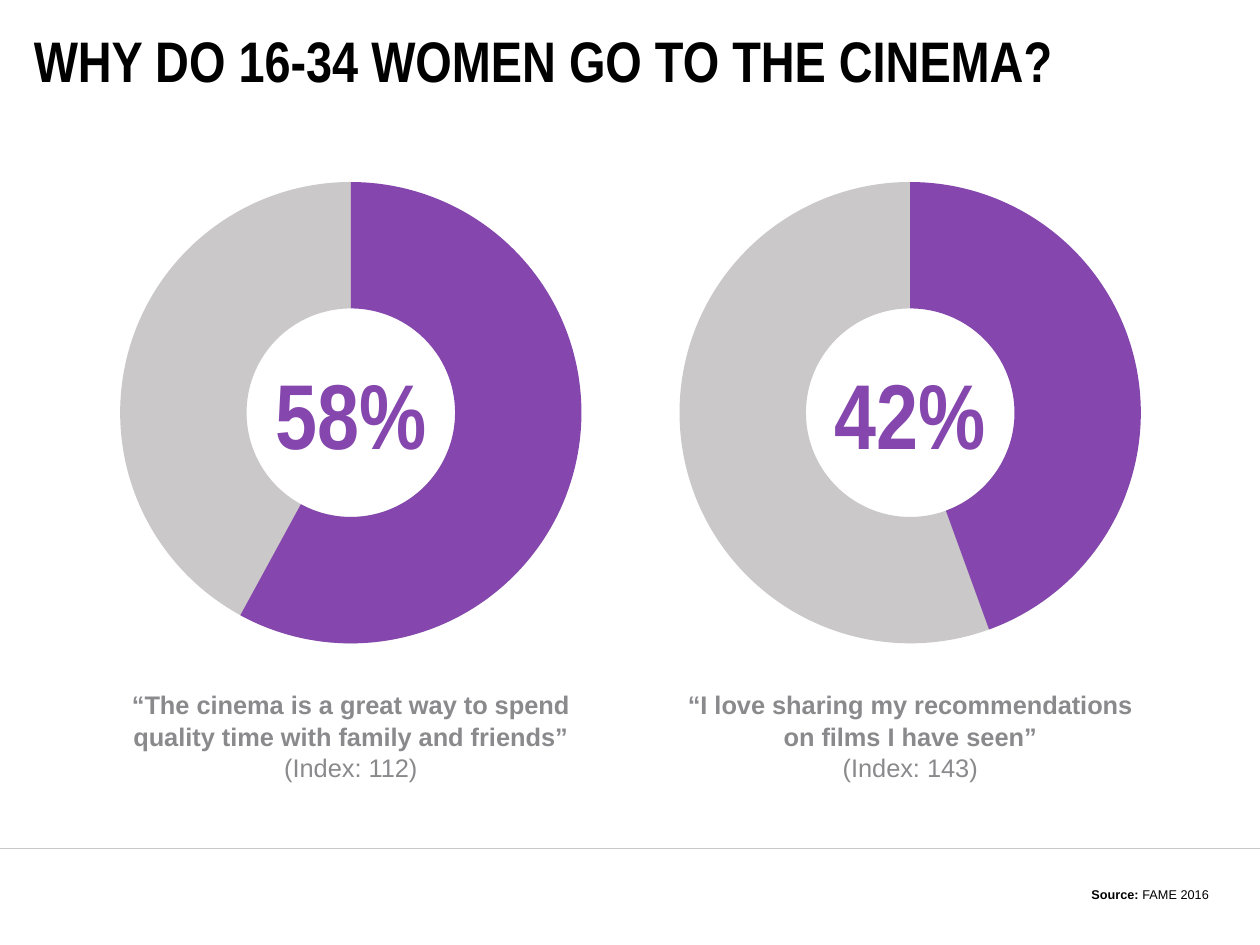
from lxml.etree import SubElement
from pptx import Presentation
from pptx.dml.color import RGBColor
from pptx.enum.shapes import MSO_CONNECTOR, MSO_SHAPE
from pptx.enum.text import MSO_ANCHOR as Anchor, PP_ALIGN as Align
from pptx.oxml.ns import qn
from pptx.util import Pt

BLACK = RGBColor(0x00, 0x00, 0x00)
GREY = RGBColor(0x8A, 0x8A, 0x8D)
LIGHT_GREY = RGBColor(0xCA, 0xC8, 0xC8)
PURPLE = RGBColor(0x85, 0x47, 0xAD)

SLIDE_WIDTH, SLIDE_HEIGHT = 793.7, 595.28
FOOTER_LINE_TOP = 534.7
RING_SIZE = 290.6
RING_TOP = 114.7
RING_THICKNESS = 0.274
TOP_ANGLE = 270
GREY_SWEEP = 249.3

# Ring centre, purple sweep in degrees, percentage, statement, index
REASONS = [
    (221, 208.6, "58%",
     "“The cinema is a great way to spend quality time with family and friends”",
     "(Index: 112)"),
    (573.4, 160, "42%",
     "“I love sharing my recommendations on films I have seen”",
     "(Index: 143)"),
]


def add_text_box(slide, left, top, width, height, anchor=Anchor.TOP):
    box = slide.shapes.add_textbox(Pt(left), Pt(top), Pt(width), Pt(height))
    frame = box.text_frame
    frame.word_wrap = True
    frame.vertical_anchor = anchor
    return frame


def style_paragraph(paragraph, size, color, align, font_name="Arial", bold=None):
    paragraph.alignment = align
    font = paragraph.font
    font.name = font_name
    font.size = Pt(size)
    font.color.rgb = color
    font.bold = bold


def add_title(slide, text):
    frame = add_text_box(slide, 21.3, 21.4, 733, 32.4, Anchor.MIDDLE)
    frame.margin_left = frame.margin_right = 0
    frame.margin_top = frame.margin_bottom = 0
    paragraph = frame.paragraphs[0]
    paragraph.text = text
    style_paragraph(paragraph, 36, BLACK, Align.LEFT, "Arial Narrow", True)


def add_arc(slide, center, start, end, color):
    """Draw a ring segment clockwise between two angles in degrees, 0 at the right."""
    arc = slide.shapes.add_shape(
        MSO_SHAPE.BLOCK_ARC, Pt(center - RING_SIZE / 2), Pt(RING_TOP),
        Pt(RING_SIZE), Pt(RING_SIZE))
    arc.adjustments[0] = start % 360 * 0.6
    arc.adjustments[1] = end % 360 * 0.6
    arc.adjustments[2] = RING_THICKNESS
    arc.shadow.inherit = False
    arc.fill.solid()
    arc.fill.fore_color.rgb = color
    arc.line.fill.background()


def add_percentage(slide, center, text):
    frame = add_text_box(slide, center - 80, 221.4, 160, 77.4, Anchor.MIDDLE)
    paragraph = frame.paragraphs[0]
    paragraph.text = text
    style_paragraph(paragraph, 58, PURPLE, Align.CENTER, "Arial Narrow", True)


def add_statement(slide, center, statement, index):
    frame = add_text_box(slide, center - 155.5, 429.6, 311, 67.5)
    frame.text = f"{statement}\n{index}"
    for paragraph, bold in zip(frame.paragraphs, (True, False)):
        paragraph.line_spacing = Pt(20)
        style_paragraph(paragraph, 16, GREY, Align.CENTER, bold=bold)


def add_footer_line(slide):
    line = slide.shapes.add_connector(
        MSO_CONNECTOR.STRAIGHT, Pt(0), Pt(FOOTER_LINE_TOP),
        Pt(SLIDE_WIDTH), Pt(FOOTER_LINE_TOP))
    line.line.color.rgb = LIGHT_GREY
    line.line.width = Pt(0.5)
    SubElement(line._element.spPr, qn("a:effectLst"))


def add_source(slide, label, source):
    frame = add_text_box(slide, 346, 555, 422.7, 17, Anchor.BOTTOM)
    paragraph = frame.paragraphs[0]
    style_paragraph(paragraph, 8, BLACK, Align.RIGHT)
    for text, bold in ((label, True), (source, False)):
        run = paragraph.add_run()
        run.text = text
        run.font.bold = bold


def main():
    presentation = Presentation()
    presentation.slide_width = Pt(SLIDE_WIDTH)
    presentation.slide_height = Pt(SLIDE_HEIGHT)
    slide = presentation.slides.add_slide(presentation.slide_layouts[6])

    add_footer_line(slide)
    add_title(slide, "WHY DO 16-34 WOMEN GO TO THE CINEMA?")
    for center, sweep, percentage, statement, index in REASONS:
        add_arc(slide, center, TOP_ANGLE - GREY_SWEEP, TOP_ANGLE, LIGHT_GREY)
        add_arc(slide, center, TOP_ANGLE, TOP_ANGLE + sweep, PURPLE)
        add_percentage(slide, center, percentage)
        add_statement(slide, center, statement, index)
    add_source(slide, "Source: ", "FAME 2016")

    presentation.save("out.pptx")


if __name__ == "__main__":
    main()
